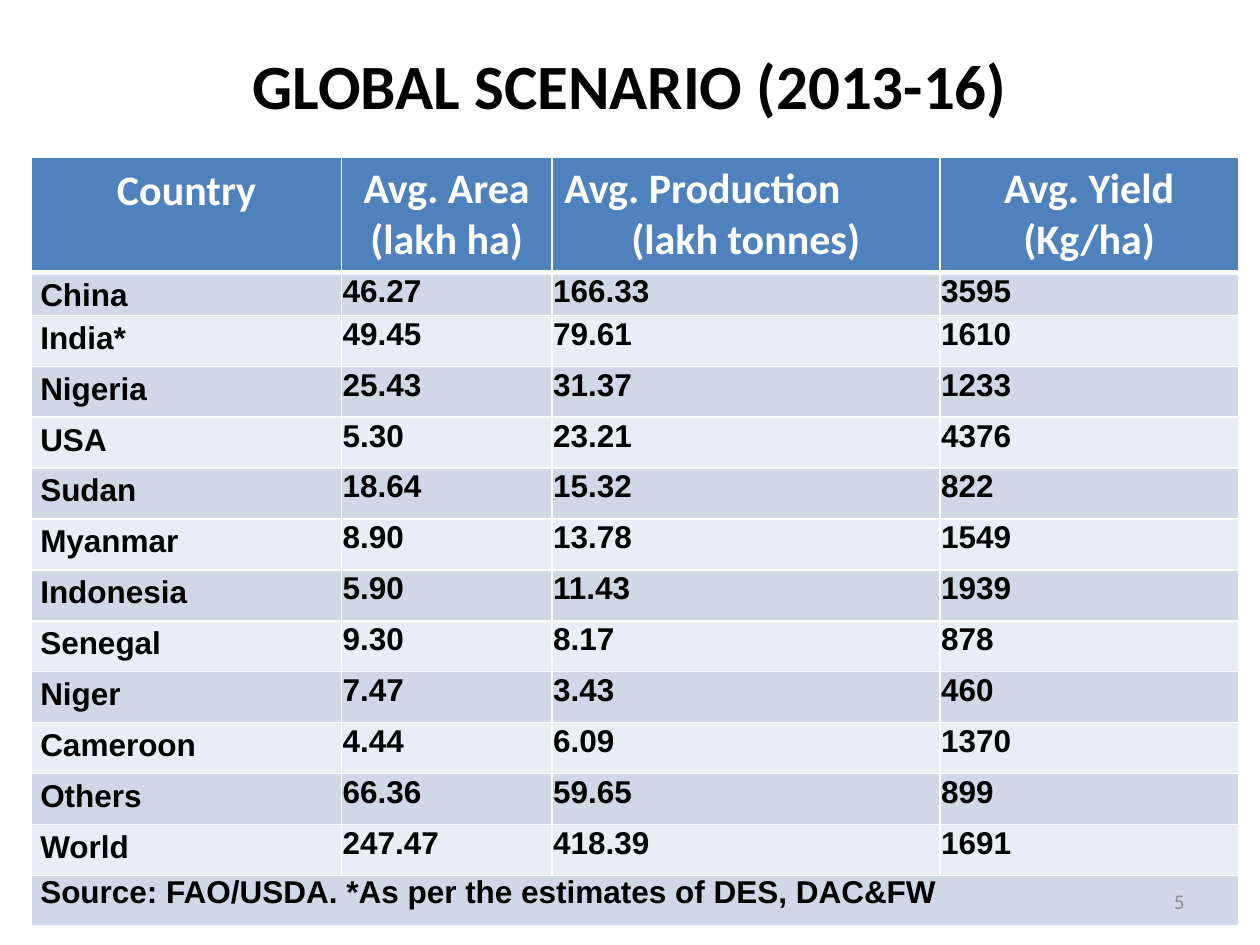
from lxml import etree
from pptx import Presentation, util as u
from pptx.dml import color
from pptx.enum import text as t
from pptx.oxml import ns

LEFT, CENTER, RIGHT = t.PP_ALIGN.LEFT, t.PP_ALIGN.CENTER, t.PP_ALIGN.RIGHT
WHITE, BLACK, GREY = "FFFFFF", "000000", "8C8C8C"
BLUE, BANDS = "4F81BD", ("D0D8E8", "E9EDF4")


def rgb(value):
    return color.RGBColor.from_string(value)


def write(frame, lines, aligns, spacing, tint, **font):
    frame.word_wrap = True
    for i, (line, align) in enumerate(zip(lines, aligns)):
        paragraph = frame.paragraphs[0] if i == 0 else frame.add_paragraph()
        paragraph.alignment = align
        paragraph.line_spacing = spacing
        run = paragraph.add_run()
        run.text = line
        for key, value in font.items():
            setattr(run.font, key, value)
        run.font.color.rgb = rgb(tint)


deck = Presentation()
deck.slide_width, deck.slide_height = u.Inches(10), u.Inches(7.5)
slide = deck.slides.add_slide(deck.slide_layouts[6])

heading_font = dict(name="Calibri", size=u.Pt(24), bold=True)
body_font = dict(name="Arial", size=u.Pt(18), bold=True)

headings = [
    (["Country"], [CENTER]),
    (["Avg. Area (lakh ha)"], [CENTER]),
    (["Avg. Production", "(lakh tonnes)"], [LEFT, CENTER]),
    (["Avg. Yield (Kg/ha)"], [CENTER]),
]
countries = [
    ("China", "46.27", "166.33", "3595"),
    ("India*", "49.45", "79.61", "1610"),
    ("Nigeria", "25.43", "31.37", "1233"),
    ("USA", "5.30", "23.21", "4376"),
    ("Sudan", "18.64", "15.32", "822"),
    ("Myanmar", "8.90", "13.78", "1549"),
    ("Indonesia", "5.90", "11.43", "1939"),
    ("Senegal", "9.30", "8.17", "878"),
    ("Niger", "7.47", "3.43", "460"),
    ("Cameroon", "4.44", "6.09", "1370"),
    ("Others", "66.36", "59.65", "899"),
    ("World", "247.47", "418.39", "1691"),
]
source = "Source: FAO/USDA. *As per the estimates of DES, DAC&FW"

column_widths = [2.46, 1.67, 3.08, 2.37]
table_height, heading_height, china_height = 6.09, 0.9, 0.34
row_height = (table_height - heading_height - china_height) / len(countries)
row_heights = [heading_height, china_height] + [row_height] * len(countries)

scenario = slide.shapes.add_table(
    len(row_heights), len(column_widths),
    deck.slide_width // 40, deck.slide_height // 6,
    u.Inches(sum(column_widths)), u.Inches(table_height)).table
for column, width in zip(scenario.columns, column_widths):
    column.width = u.Inches(width)
for row, height in zip(scenario.rows, row_heights):
    row.height = u.Inches(height)

label_insets = dict(margin_left=0.07, margin_top=0, margin_right=0.07, margin_bottom=0)
value_insets = dict(margin_left=0.01, margin_top=0.01, margin_right=0.01, margin_bottom=0)
heading_insets = dict(margin_left=0.1, margin_top=0.05, margin_right=0.1, margin_bottom=0.05)

for r in range(len(row_heights)):
    for c in range(len(column_widths)):
        cell = scenario.cell(r, c)
        rest = heading_insets if r == 0 else value_insets
        for key, value in (label_insets if c == 0 else rest).items():
            setattr(cell, key, u.Inches(value))
        properties = cell._tc.get_or_add_tcPr()
        for side in ("L", "R", "T", "B"):
            thick = (r, side) in ((0, "B"), (1, "T"))
            border = etree.SubElement(properties, ns.qn("a:ln" + side),
                                      w=str(u.Pt(3 if thick else 1)))
            paint = etree.SubElement(border, ns.qn("a:solidFill"))
            etree.SubElement(paint, ns.qn("a:srgbClr"), val=WHITE)
        cell.fill.solid()
        cell.fill.fore_color.rgb = rgb(BLUE if r == 0 else BANDS[(r - 1) % 2])
        spacing = 1.15 if c == 0 else 1.0
        if r == 0:
            write(cell.text_frame, *headings[c], spacing, WHITE, **heading_font)
        elif r <= len(countries):
            write(cell.text_frame, [countries[r - 1][c]], [LEFT], spacing, BLACK, **body_font)

footnote = scenario.cell(len(row_heights) - 1, 0)
footnote.merge(scenario.cell(len(row_heights) - 1, len(column_widths) - 1))
write(footnote.text_frame, [source], [LEFT], 1.0, BLACK, **body_font)

captions = [
    ("GLOBAL SCENARIO (2013-16)", (0.5, 0.17, 9, 1), CENTER, BLACK, 36, True),
    ("5", (7.17, 6.95, 2.33, 0.4), RIGHT, GREY, 12, False),
]
for words, place, align, tint, size, bold in captions:
    frame = slide.shapes.add_textbox(*map(u.Inches, place)).text_frame
    frame.vertical_anchor = t.MSO_ANCHOR.MIDDLE
    write(frame, [words], [align], 1.0, tint, name="Calibri", size=u.Pt(size), bold=bold)

deck.save("out.pptx")
